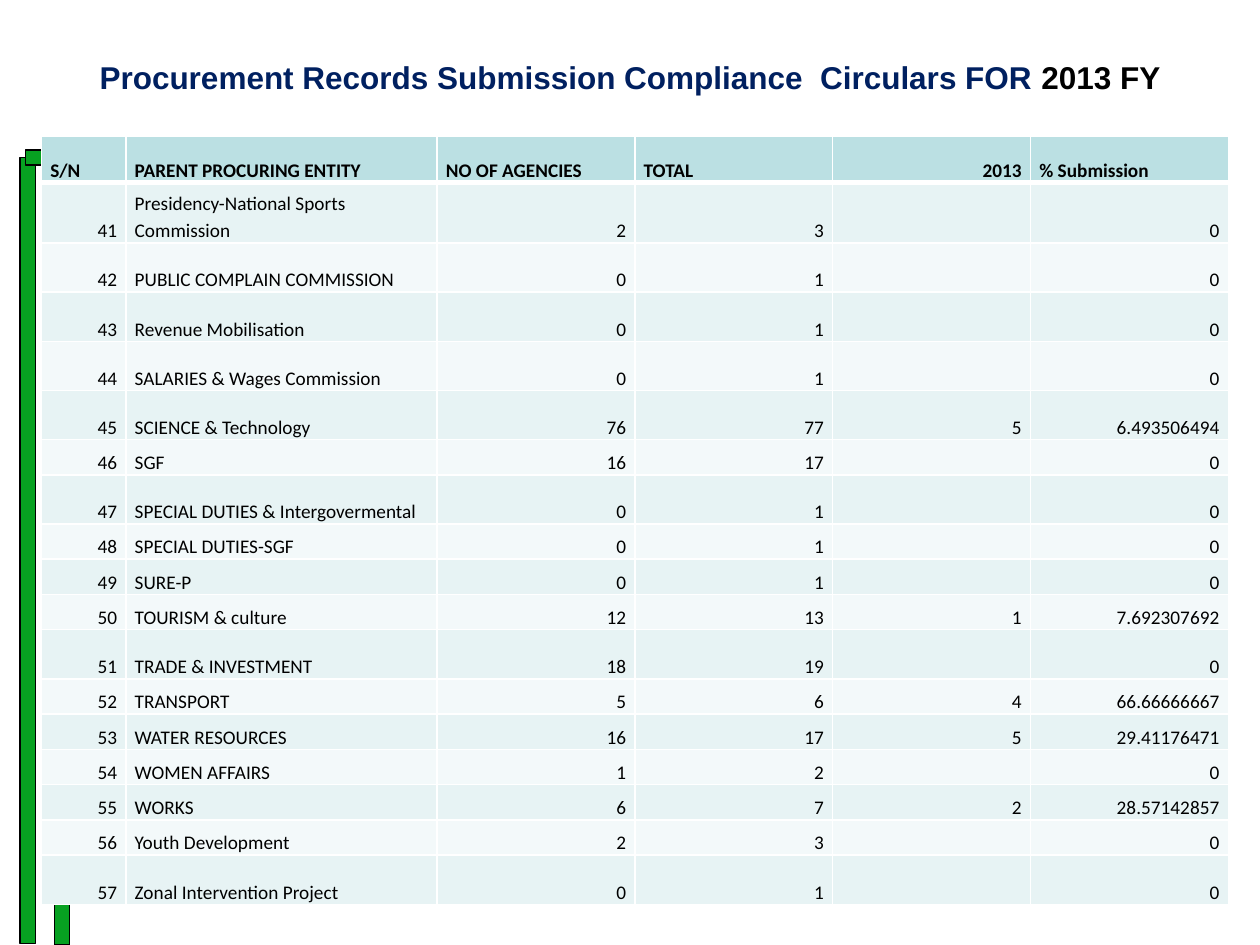
"""Build the 2013 procurement records submission compliance slide."""
from lxml.etree import SubElement
from pptx import Presentation
from pptx.dml.color import RGBColor as RGB
from pptx.enum.shapes import MSO_SHAPE as SHAPE
from pptx.enum.text import MSO_ANCHOR as ANCHOR, PP_ALIGN as ALIGN
from pptx.oxml.ns import qn
from pptx.util import Inches, Pt

COLORS = {
    "green": "07A121", "navy": "002060", "black": "000000", "white": "FFFFFF",
    "header": "BBE0E3", "odd": "E7F3F4", "even": "F3F9FA",
}
BARS = [(0.16, 1.25, 0.12, 6.24), (0.43, 1.26, 0.12, 6.24), (0.2, 1.19, 9.29, 0.12)]
HEADERS = ["S/N", "PARENT PROCURING ENTITY", "NO OF AGENCIES", "TOTAL", "2013", "% Submission"]
COL_WIDTHS = [0.67, 2.47] + [1.57] * 4
FIRST_SN = 41
SHORT, TALL = 0.28, 0.39
ENTITIES = [
    ("Presidency-National Sports Commission", 2, 0, 0.48),
    ("PUBLIC COMPLAIN COMMISSION", 0, 0, TALL),
    ("Revenue Mobilisation", 0, 0, TALL),
    ("SALARIES & Wages Commission", 0, 0, TALL),
    ("SCIENCE & Technology", 76, 5, TALL),
    ("SGF", 16, 0, SHORT),
    ("SPECIAL DUTIES & Intergovermental", 0, 0, TALL),
    ("SPECIAL DUTIES-SGF", 0, 0, SHORT),
    ("SURE-P", 0, 0, SHORT),
    ("TOURISM & culture", 12, 1, SHORT),
    ("TRADE & INVESTMENT", 18, 0, TALL),
    ("TRANSPORT", 5, 4, SHORT),
    ("WATER RESOURCES", 16, 5, SHORT),
    ("WOMEN AFFAIRS", 1, 0, SHORT),
    ("WORKS", 6, 2, SHORT),
    ("Youth Development", 2, 0, SHORT),
    ("Zonal Intervention Project", 0, 0, TALL),
]


def color(name):
    return RGB.from_string(COLORS[name])


def add_border(cell, side, width):
    ln = SubElement(cell._tc.get_or_add_tcPr(), qn(f"a:ln{side}"), w=str(Pt(width)))
    SubElement(SubElement(ln, qn("a:solidFill")), qn("a:srgbClr"), val=COLORS["white"])


prs = Presentation()
prs.slide_width, prs.slide_height = Inches(10), Inches(7.5)
s = prs.slides.add_slide(prs.slide_layouts[6])

for box in BARS:
    sp = s.shapes.add_shape(SHAPE.RECTANGLE, *map(Inches, box))
    sp.shadow.inherit = False
    sp.fill.solid()
    sp.fill.fore_color.rgb = color("green")
    sp.line.color.rgb = color("black")
    sp.line.width = Pt(0.75)

rows = [HEADERS]
heights = [0.37]
for sn, (entity, agencies, submitted, height) in enumerate(ENTITIES, FIRST_SN):
    total = agencies + 1
    percent = f"{100 * submitted / total:.10g}"
    rows.append([str(sn), entity, str(agencies), str(total), str(submitted or ""), percent])
    heights.append(height)

table = s.shapes.add_table(
    len(rows), len(HEADERS), Inches(0.33), Inches(1.08),
    Inches(sum(COL_WIDTHS)), Inches(sum(heights)),
).table
for column, width in zip(table.columns, COL_WIDTHS):
    column.width = Inches(width)

for i, (values, height) in enumerate(zip(rows, heights)):
    table.rows[i].height = Inches(height)
    band = "header" if i == 0 else "odd" if i % 2 else "even"
    for j, value in enumerate(values):
        cell = table.cell(i, j)
        cell.margin_left = cell.margin_right = Inches(0.07)
        cell.margin_top = cell.margin_bottom = 0
        cell.vertical_anchor = ANCHOR.BOTTOM
        for side in "LRTB":
            under_header = (i, side) in [(0, "B"), (1, "T")]
            add_border(cell, side, 3 if under_header else 1)
        cell.fill.solid()
        cell.fill.fore_color.rgb = color(band)
        p = cell.text_frame.paragraphs[0]
        p.text = value
        p.line_spacing = 1.15
        right = j == 4 if i == 0 else j != 1
        p.alignment = ALIGN.RIGHT if right else ALIGN.LEFT
        p._p.get_or_add_endParaRPr().set("sz", "1100")
        for r in p.runs:
            r.font.name = "Calibri"
            r.font.size = Pt(11)
            r.font.bold = i == 0
            r.font.color.rgb = color("black")

title = s.shapes.add_textbox(Inches(0.5), Inches(0.3), Inches(9), Inches(0.62))
tf = title.text_frame
tf.word_wrap = True
tf.vertical_anchor = ANCHOR.MIDDLE
p = tf.paragraphs[0]
p.alignment = ALIGN.CENTER
for text, name in [
    ("Procurement Records Submission Compliance  Circulars FOR ", "navy"),
    ("2013 FY", "black"),
]:
    r = p.add_run()
    r.text = text
    r.font.name = "Arial"
    r.font.size = Pt(18)
    r.font.bold = True
    r.font.color.rgb = color(name)

prs.save("out.pptx")
